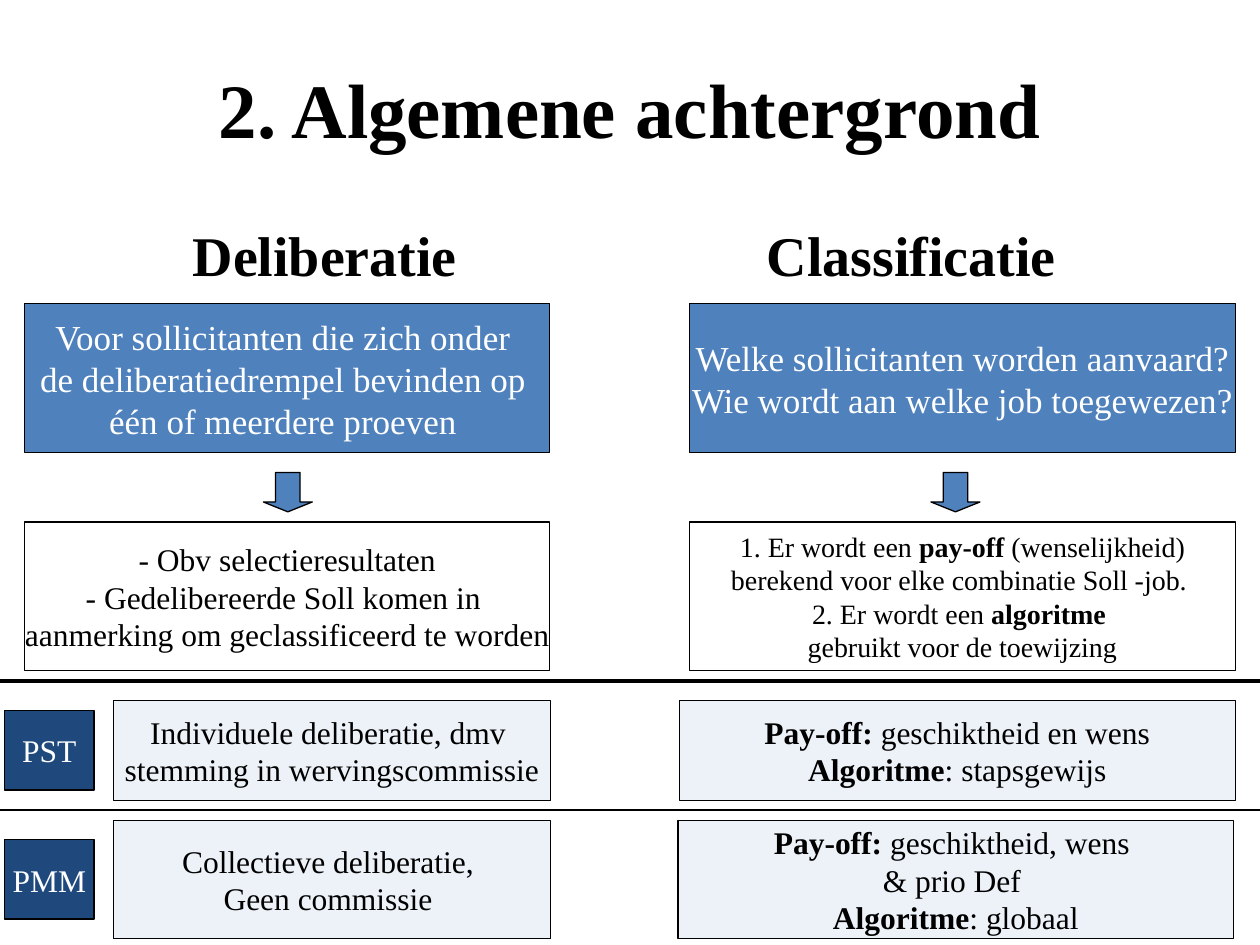
from dataclasses import dataclass

from lxml import etree
from pptx import Presentation
from pptx.dml.color import RGBColor
from pptx.enum.shapes import MSO_CONNECTOR, MSO_SHAPE
from pptx.enum.text import MSO_ANCHOR, PP_ALIGN
from pptx.oxml.ns import qn
from pptx.util import Pt

RECTANGLE = MSO_SHAPE.RECTANGLE
DOWN_ARROW = MSO_SHAPE.DOWN_ARROW
STRAIGHT = MSO_CONNECTOR.STRAIGHT
MIDDLE = MSO_ANCHOR.MIDDLE
TOP = MSO_ANCHOR.TOP
CENTER = PP_ALIGN.CENTER
LEFT = PP_ALIGN.LEFT


@dataclass(frozen=True)
class Theme:
    font: str = "Times New Roman"
    black: str = "000000"
    white: str = "FFFFFF"
    blue: str = "4F81BD"
    navy: str = "1F497D"
    title: int = 44
    heading: int = 32
    question: int = 20
    body: int = 18
    detail: int = 16
    thin: float = 0.75
    thick: float = 2
    tint: int = 10


class SlideBuilder:
    def __init__(self, deck, theme):
        self.theme = theme
        self.slide = deck.slides.add_slide(deck.slide_layouts[5])

    def set_text(self, frame, lines, size, color, align=CENTER, bold=False, anchor=MIDDLE):
        frame.vertical_anchor = anchor
        for index, line in enumerate(lines):
            para = frame.paragraphs[0] if index == 0 else frame.add_paragraph()
            para.alignment = align
            para.font.name = self.theme.font
            para.font.size = Pt(size)
            para.font.color.rgb = RGBColor.from_string(color)
            para.font.bold = bold
            for position, text in enumerate(line.split("*")):
                if text:
                    span = para.add_run()
                    span.text = text
                    if position % 2:
                        span.font.bold = True

    def title(self, text, bounds):
        box = self.slide.shapes.title
        box.left, box.top, box.width, box.height = map(Pt, bounds)
        self.set_text(box.text_frame, [text], self.theme.title, self.theme.black, bold=True)

    def heading(self, text, bounds):
        box = self.slide.shapes.add_textbox(*map(Pt, bounds))
        box.text_frame.word_wrap = True
        self.set_text(box.text_frame, [text], self.theme.heading, self.theme.black,
                      LEFT, bold=True, anchor=TOP)

    def shape(self, kind, bounds, fill, opacity=100):
        shape = self.slide.shapes.add_shape(kind, *map(Pt, bounds))
        shape.shadow.inherit = False
        shape.fill.solid()
        shape.fill.fore_color.rgb = RGBColor.from_string(fill)
        if opacity < 100:
            properties = shape._element.find(qn("p:spPr"))
            color = properties.find(f"{qn('a:solidFill')}/{qn('a:srgbClr')}")
            etree.SubElement(color, qn("a:alpha")).set("val", str(opacity * 1000))
        shape.line.color.rgb = RGBColor.from_string(self.theme.black)
        shape.line.width = Pt(self.theme.thin)
        return shape

    def box(self, lines, bounds, size, fill, color, opacity=100):
        box = self.shape(RECTANGLE, bounds, fill, opacity)
        box.text_frame.word_wrap = False
        self.set_text(box.text_frame, lines, size, color)

    def arrow(self, bounds):
        arrow = self.shape(DOWN_ARROW, bounds, self.theme.blue)
        arrow.adjustments[0] = 0.5
        arrow.adjustments[1] = 0.25

    def divider(self, top, width):
        line = self.slide.shapes.add_connector(STRAIGHT, Pt(0), Pt(top), Pt(720), Pt(top))
        line.line.color.rgb = RGBColor.from_string(self.theme.black)
        line.line.width = Pt(width)
        properties = line._element.find(qn("p:spPr"))
        etree.SubElement(properties, qn("a:effectLst"))


def main():
    theme = Theme()
    deck = Presentation()
    deck.slide_width, deck.slide_height = Pt(720), Pt(540)
    page = SlideBuilder(deck, theme)
    page.title("2. Algemene achtergrond", (54, 3.6, 612, 116))

    columns = [
        ("Deliberatie", 103, 14.2, 300, 150.5, theme.body,
         ["Voor sollicitanten die zich onder ",
          "de deliberatiedrempel bevinden op ",
          "één of meerdere proeven "],
         ["- Obv selectieresultaten",
          "- Gedelibereerde Soll komen in ",
          "aanmerking om geclassificeerd te worden"]),
        ("Classificatie", 431, 394, 312, 532, theme.detail,
         ["Welke sollicitanten worden aanvaard?",
          "Wie wordt aan welke job toegewezen?"],
         ["1. Er wordt een *pay-off* (wenselijkheid)",
          "berekend voor elke combinatie Soll -job. ",
          "2. Er wordt een *algoritme *",
          "gebruikt voor de toewijzing"]),
    ]
    for name, name_left, left, width, arrow_left, size, question, answer in columns:
        page.heading(name, (name_left, 122.4, 180, 46))
        page.box(question, (left, 173.5, width, 85), theme.question, theme.blue, theme.white)
        page.arrow((arrow_left, 270, 28, 22.5))
        page.box(answer, (left, 298.3, width, 85), size, theme.white, theme.black)

    page.divider(389, theme.thick)
    page.divider(462.8, theme.thin)

    methods = [
        ("PST", 400.3, 57, 388.3,
         ["Individuele deliberatie, dmv ", "stemming in wervingscommissie"],
         ["*Pay-off: *geschiktheid en wens", "*Algoritme*: stapsgewijs"]),
        ("PMM", 468.7, 67.7, 387.4,
         ["Collectieve deliberatie, ", "Geen commissie "],
         ["*Pay-off: *geschiktheid, wens ", "& prio Def ", "*Algoritme*: globaal"]),
    ]
    tag_height = 45.4
    for name, top, height, right_left, deliberation, classification in methods:
        tag_top = top + (height - tag_height) / 2
        page.box([name], (2.6, tag_top, 51.2, tag_height), theme.body, theme.navy, theme.white)
        for lines, left, width in ((deliberation, 65, 249.5),
                                   (classification, right_left, 317.6)):
            page.box(lines, (left, top, width, height), theme.body,
                     theme.blue, theme.black, theme.tint)

    deck.save("out.pptx")


if __name__ == "__main__":
    main()
